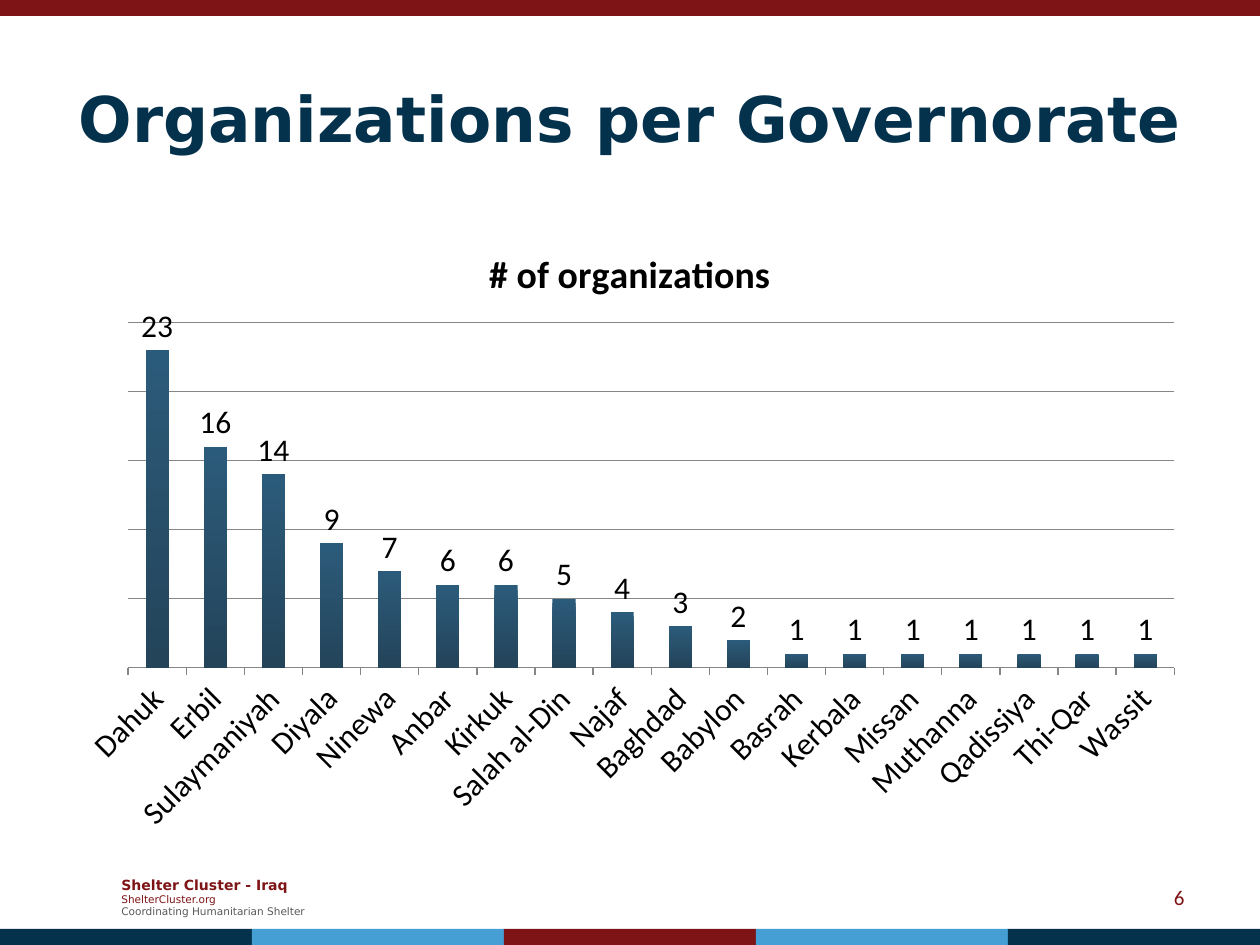
"""Build the slide showing the number of organizations per governorate."""
from pptx import Presentation
from pptx import util as u
from pptx.chart import data as chart_data
from pptx.dml.color import RGBColor
from pptx.enum import chart as charts, shapes, text

COLORS = {"navy": "04314C", "blue": "459FD5", "red": "7F1416", "gray": "595959",
          "grid": "868686", "black": "000000", "bar_top": "2B5B7A", "bar_bottom": "24445A"}
ORGANIZATIONS = {
    "Dahuk": 23, "Erbil": 16, "Sulaymaniyah": 14, "Diyala": 9, "Ninewa": 7, "Anbar": 6,
    "Kirkuk": 6, "Salah al‑Din": 5, "Najaf": 4, "Baghdad": 3, "Babylon": 2, "Basrah": 1,
    "Kerbala": 1, "Missan": 1, "Muthanna": 1, "Qadissiya": 1, "Thi-Qar": 1, "Wassit": 1}
WIDTH, HEIGHT, BAND = 1260, 945, 16


def box(*lengths):
    return [u.Emu(round(length * 914400 / 126)) for length in lengths]


def style(font, name, size, color, bold=False):
    font.name, font.size, font.bold = name, u.Pt(size), bold
    font.color.rgb = RGBColor.from_string(COLORS[color])


presentation = Presentation()
presentation.slide_width, presentation.slide_height = box(WIDTH, HEIGHT)
slide = presentation.slides.add_slide(presentation.slide_layouts[6])

bands = [(0, 0, WIDTH, "red")]
for index, color in enumerate(["navy", "blue", "red", "blue", "navy"]):
    left = index * WIDTH // 5
    bands.append((left, HEIGHT - BAND, WIDTH // 5, color))
for left, top, width, color in bands:
    shape = slide.shapes.add_shape(shapes.MSO_SHAPE.RECTANGLE, *box(left, top, width, BAND))
    shape.shadow.inherit = False
    shape.fill.solid()
    shape.fill.fore_color.rgb = RGBColor.from_string(COLORS[color])
    shape.line.fill.background()

left_align, center, right_align = text.PP_ALIGN.LEFT, text.PP_ALIGN.CENTER, text.PP_ALIGN.RIGHT
text_boxes = [
    ((63, 38, 1134, 158), center,
     [("Organizations per Governorate", "DejaVu Sans", 36, "navy", True)]),
    ((109, 869, 218, 56), left_align,
     [("Shelter Cluster - Iraq", "DejaVu Sans", 8, "red", True),
      ("ShelterCluster.org", "DejaVu Sans", 6, "red", False),
      ("Coordinating Humanitarian Shelter", "DejaVu Sans", 6, "gray", False)]),
    ((903, 872, 294, 50), right_align, [("6", "Calibri", 12, "red", False)])]
for position, alignment, lines in text_boxes:
    frame = slide.shapes.add_textbox(*box(*position)).text_frame
    frame.word_wrap = True
    frame.vertical_anchor = text.MSO_ANCHOR.MIDDLE
    frame.text = "\n".join(line[0] for line in lines)
    for paragraph, line in zip(frame.paragraphs, lines):
        paragraph.alignment = alignment
        style(paragraph.font, *line[1:])

data = chart_data.CategoryChartData()
data.categories = list(ORGANIZATIONS)
data.add_series("# of organizations", list(ORGANIZATIONS.values()))
chart = slide.shapes.add_chart(charts.XL_CHART_TYPE.COLUMN_CLUSTERED,
                               *box(63, 221, 1134, 624), data).chart
style(chart.font, "Calibri", 18, "black")
chart.has_legend = False
chart.has_title = True
chart.chart_title.include_in_layout = False
title = chart.chart_title.text_frame
title.text = "# of organizations"
style(title.paragraphs[0].font, "Calibri", 21.6, "black", True)

value_axis = chart.value_axis
value_axis.visible = False
value_axis.minimum_scale, value_axis.maximum_scale, value_axis.major_unit = 0, 25, 5
value_axis.has_major_gridlines = True
category_axis = chart.category_axis
category_axis.major_tick_mark = charts.XL_TICK_MARK.OUTSIDE
style(category_axis.tick_labels.font, "Calibri", 18, "black")
category_axis._element.txPr.bodyPr.set("rot", "-2700000")
for line_format in (value_axis.major_gridlines.format, category_axis.format):
    line_format.line.width = u.Pt(0.75)
    line_format.line.color.rgb = RGBColor.from_string(COLORS["grid"])

plot = chart.plots[0]
plot.gap_width = 150
plot.vary_by_categories = False
series = plot.series[0]
series.invert_if_negative = False
fill = series.format.fill
fill.gradient()
fill.gradient_angle = 270
for stop, color in zip(fill.gradient_stops, ["bar_top", "bar_bottom"]):
    stop.color.rgb = RGBColor.from_string(COLORS[color])
labels = series.data_labels
labels.show_value = True
labels.position = charts.XL_LABEL_POSITION.OUTSIDE_END
style(labels.font, "Calibri", 18, "black")

presentation.save("out.pptx")
